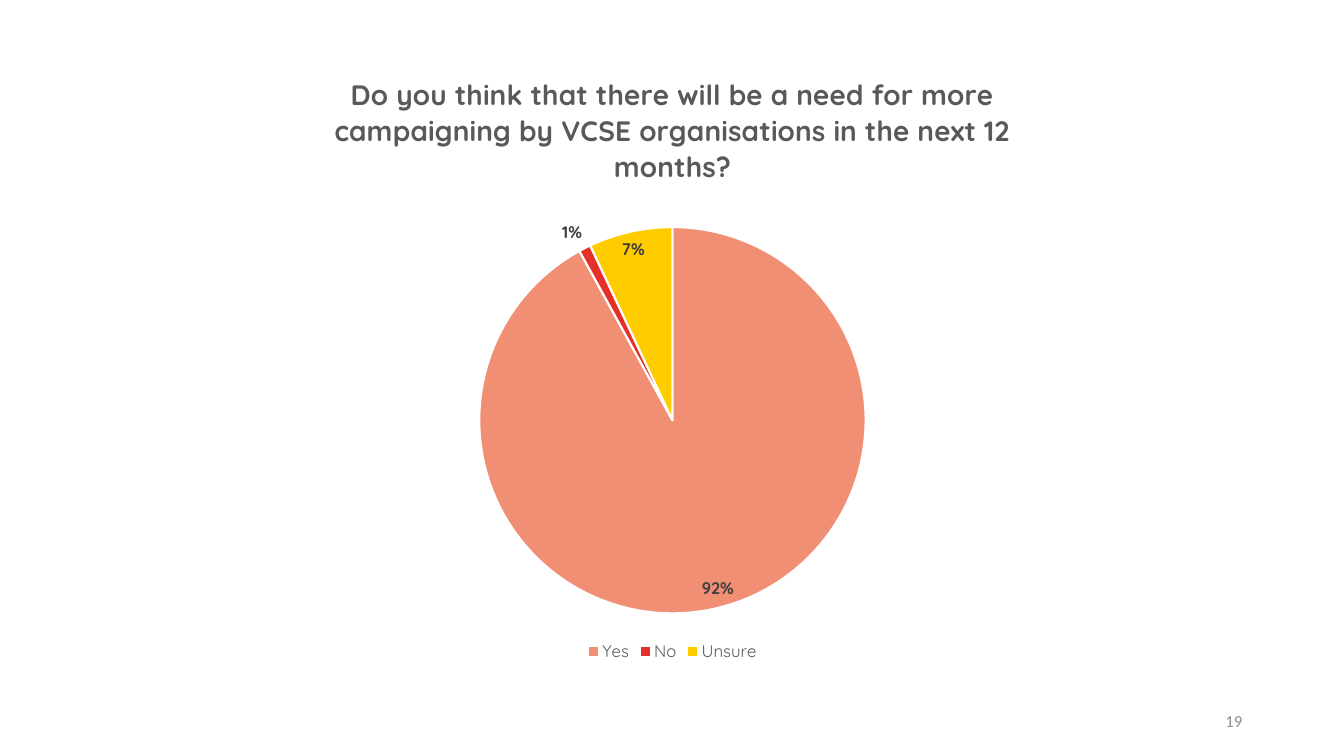
"""Build a slide with a pie chart on the need for more campaigning."""
from lxml import etree
from pptx import Presentation
from pptx import util as u
from pptx.chart.data import CategoryChartData
from pptx.dml.color import RGBColor
from pptx.enum import chart as ch, text
from pptx.oxml.ns import qn

THEME = {
    "heading": ("Quicksand", 20, True, "595959"),
    "legend": ("Quicksand", 12, False, "595959"),
    "label": ("Quicksand", 12, True, "404040"),
    "number": ("Calibri", 12, False, "8C8C8C"),
    "base": ("Calibri", 10, False, "000000"),
    "slices": ("F18F74", "E53027", "FFCC00"),
    "edge": "FFFFFF",
}
QUESTION = ("Do you think that there will be a need for more campaigning by "
            "VCSE\u00a0organisations\u00a0in the next 12 months?").replace("\u00a0", " ")
ANSWERS = {"Yes": 92, "No": 1, "Unsure": 7}


def style(font, role):
    name, size, bold, color = THEME[role]
    font.name, font.size, font.bold = name, u.Pt(size), bold
    font.color.rgb = RGBColor.from_string(color)


def place(layout, **settings):
    manual = etree.SubElement(layout, qn("c:manualLayout"))
    for tag, value in settings.items():
        etree.SubElement(manual, qn(f"c:{tag}")).set("val", str(value))


deck = Presentation()
deck.slide_width, deck.slide_height = u.Inches(13.33), u.Inches(7.5)
slide = deck.slides.add_slide(deck.slide_layouts[6])

survey = CategoryChartData()
survey.categories = list(ANSWERS)
survey.add_series("Series 1", list(ANSWERS.values()))
pie = slide.shapes.add_chart(
    ch.XL_CHART_TYPE.PIE, u.Inches(1.88), u.Inches(0.51),
    u.Inches(9.58), u.Inches(6.1), survey).chart
style(pie.font, "base")

pie.has_title = True
heading = pie.chart_title.text_frame.paragraphs[0]
heading.text = QUESTION
style(heading.font, "heading")
heading_layout = etree.Element(qn("c:layout"))
pie.chart_title._element.find(qn("c:tx")).addnext(heading_layout)
place(heading_layout, xMode="edge", yMode="edge", x=0.15, y=0.04)

plot_area = pie._chartSpace.chart.plotArea
plot_layout = plot_area.find(qn("c:layout"))
if plot_layout is None:
    plot_layout = etree.Element(qn("c:layout"))
    plot_area.insert(0, plot_layout)
place(plot_layout, layoutTarget="inner", xMode="edge", yMode="edge",
      x=0.3, y=0.28, w=0.4, h=0.64)

pie.has_legend = True
pie.legend.position = ch.XL_LEGEND_POSITION.BOTTOM
pie.legend.include_in_layout = False
style(pie.legend.font, "legend")

plot = pie.plots[0]
plot.vary_by_categories = True
answers = plot.series[0]
for index, color in enumerate(THEME["slices"]):
    slice_format = answers.points[index].format
    slice_format.fill.solid()
    slice_format.fill.fore_color.rgb = RGBColor.from_string(color)
    slice_format.line.color.rgb = RGBColor.from_string(THEME["edge"])
    slice_format.line.width = u.Pt(1.5)

labels = answers.data_labels
labels.show_percentage, labels.show_value = True, False
labels.number_format, labels.number_format_is_linked = "0%", False
labels.position = ch.XL_LABEL_POSITION.BEST_FIT
style(labels.font, "label")

page_number = slide.shapes.add_textbox(
    u.Inches(9.42), u.Inches(6.95), u.Inches(3), u.Inches(0.4)).text_frame
page_number.word_wrap = True
page_number.vertical_anchor = text.MSO_ANCHOR.MIDDLE
number_line = page_number.paragraphs[0]
number_line.text = "19"
number_line.alignment = text.PP_ALIGN.RIGHT
style(number_line.font, "number")

deck.save("out.pptx")
